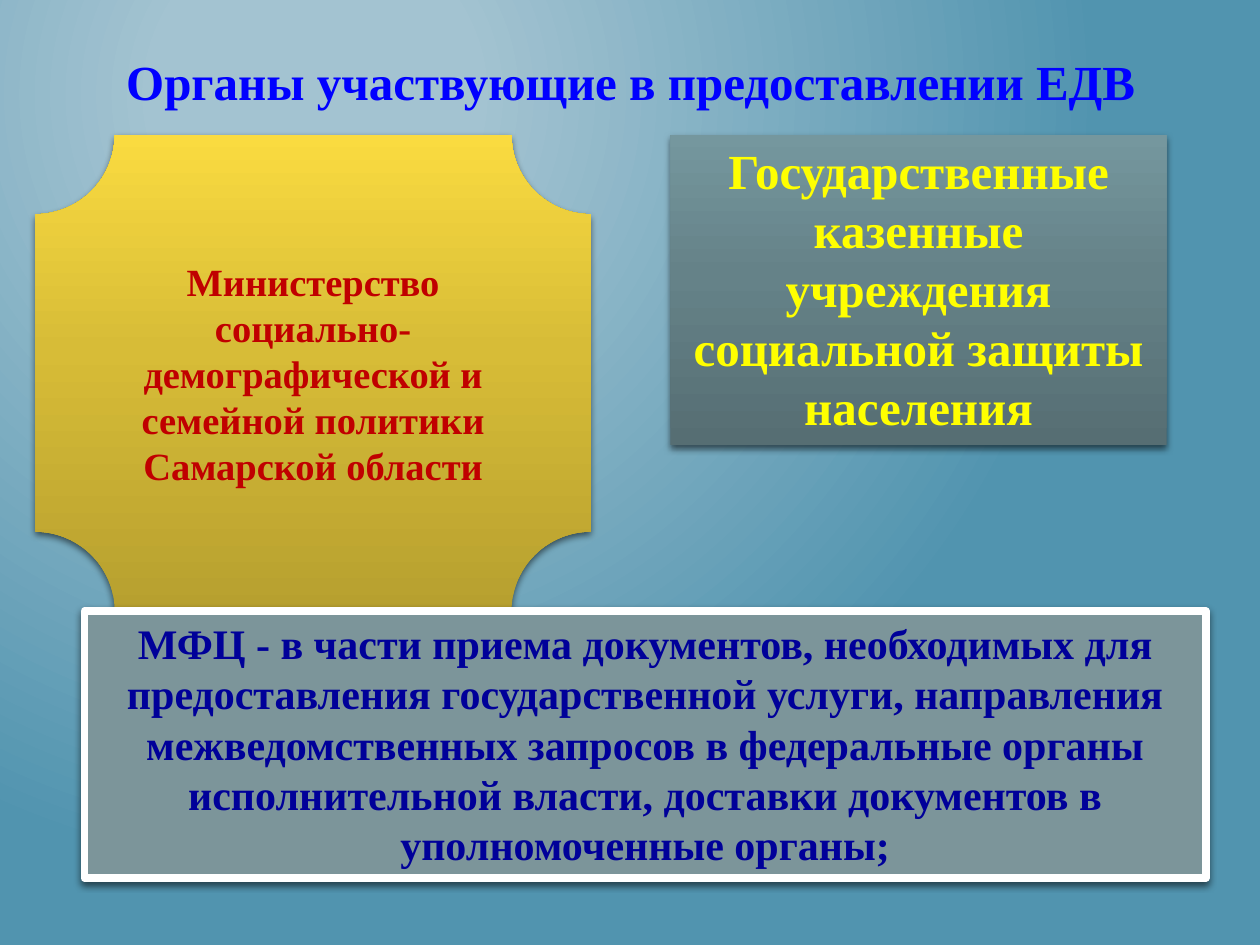
"""Build the slide on the bodies that take part in granting the EDV payment."""
from lxml import etree
from pptx import Presentation
from pptx.dml.color import RGBColor
from pptx.enum.shapes import MSO_SHAPE
from pptx.enum.text import MSO_ANCHOR, MSO_AUTO_SIZE, PP_ALIGN
from pptx.oxml.ns import qn
from pptx.util import Inches, Pt

RECT, PLAQUE = MSO_SHAPE.RECTANGLE, MSO_SHAPE.PLAQUE
TOP, MIDDLE = MSO_ANCHOR.TOP, MSO_ANCHOR.MIDDLE
CENTER = PP_ALIGN.CENTER
GROW, FIXED = MSO_AUTO_SIZE.SHAPE_TO_FIT_TEXT, MSO_AUTO_SIZE.NONE

FONT = "Times New Roman"
BLUE = RGBColor(0x00, 0x00, 0xFF)
NAVY = RGBColor(0x00, 0x00, 0x99)
RED = RGBColor(0xC0, 0x00, 0x00)
YELLOW = RGBColor(0xFF, 0xFF, 0x00)
WHITE = RGBColor(0xFF, 0xFF, 0xFF)
BLACK = RGBColor(0x00, 0x00, 0x00)
GRAY = RGBColor(0x7C, 0x95, 0x9A)
SKY = [(20, RGBColor(0xA3, 0xC3, 0xD1)), (100, RGBColor(0x51, 0x94, 0xAF))]
GOLD = [(0, RGBColor(0xB7, 0xA0, 0x2F)), (55, RGBColor(0xD7, 0xBC, 0x37)),
        (100, RGBColor(0xFA, 0xDB, 0x40))]
SLATE = [(0, RGBColor(0x56, 0x6E, 0x73)), (55, RGBColor(0x65, 0x82, 0x88)),
         (100, RGBColor(0x75, 0x97, 0x9E))]


def set_gradient(fill, parent, stops):
    fill.gradient()
    grad = parent.find(".//" + qn("a:gradFill"))
    for child in list(grad):
        grad.remove(child)
    lst = etree.SubElement(grad, qn("a:gsLst"))
    for pos, color in stops:
        gs = etree.SubElement(lst, qn("a:gs"), pos=str(pos * 1000))
        etree.SubElement(gs, qn("a:srgbClr"), val=str(color))
    return grad


def set_text(sp, text, size=28, color=BLUE, anchor=TOP, fit=GROW):
    tf = sp.text_frame
    tf.word_wrap = True
    tf.auto_size = fit
    tf.vertical_anchor = anchor
    p = tf.paragraphs[0]
    p.alignment = CENTER
    r = p.add_run()
    r.text = text
    r.font.name, r.font.size, r.font.bold = FONT, Pt(size), True
    r.font.color.rgb = color


prs = Presentation()
prs.slide_width, prs.slide_height = Inches(10), Inches(7.5)
slide = prs.slides.add_slide(prs.slide_layouts[6])
U = prs.slide_width / 100
LEFT, ROW_1, ROW_2 = 2.8, 10.7, 48.5

grad = set_gradient(slide.background.fill, slide.element, SKY)
glow = etree.SubElement(grad, qn("a:path"), {"path": "circle"})
etree.SubElement(glow, qn("a:fillToRect"), l="50000", t="20000", r="100000", b="100000")

title = slide.shapes.add_textbox(*(int(v * U) for v in (LEFT, 3.6, 94.5, 5.7)))
set_text(title, "Органы участвующие в предоставлении ЕДВ")

boxes = [
    (PLAQUE, (LEFT, ROW_1, 44.1, ROW_2 - ROW_1), GOLD,
     "Министерство социально-демографической и семейной политики Самарской области",
     dict(size=22, color=RED, anchor=MIDDLE, fit=FIXED)),
    (RECT, (53.2, ROW_1, 39.4, 24.6), SLATE,
     "Государственные казенные учреждения социальной защиты населения",
     dict(color=YELLOW)),
    (RECT, (6.7, ROW_2, 89, 21.2), GRAY,
     "МФЦ - в части приема документов, необходимых для предоставления "
     "государственной услуги, направления межведомственных запросов в "
     "федеральные органы исполнительной власти, доставки документов в "
     "уполномоченные органы;",
     dict(size=24, color=NAVY)),
]

for kind, place, paint, text, style in boxes:
    sp = slide.shapes.add_shape(kind, *(int(v * U) for v in place))
    props = sp.element.spPr
    if paint is GRAY:
        sp.fill.solid()
        sp.fill.fore_color.rgb = GRAY
        sp.line.color.rgb = WHITE
        sp.line.width = Pt(4.32)
    else:
        grad = set_gradient(sp.fill, props, paint)
        etree.SubElement(grad, qn("a:lin"), ang=str(270 * 60000), scaled="0")
        sp.line.fill.background()
    sp.shadow.inherit = False
    shadow = etree.SubElement(props.find(qn("a:effectLst")), qn("a:outerShdw"),
                              blurRad=str(Pt(4)), dist=str(Pt(2)),
                              dir=str(90 * 60000), rotWithShape="0")
    tint = etree.SubElement(shadow, qn("a:srgbClr"), val=str(BLACK))
    etree.SubElement(tint, qn("a:alpha"), val="55000")
    set_text(sp, text, **style)

prs.save("out.pptx")
